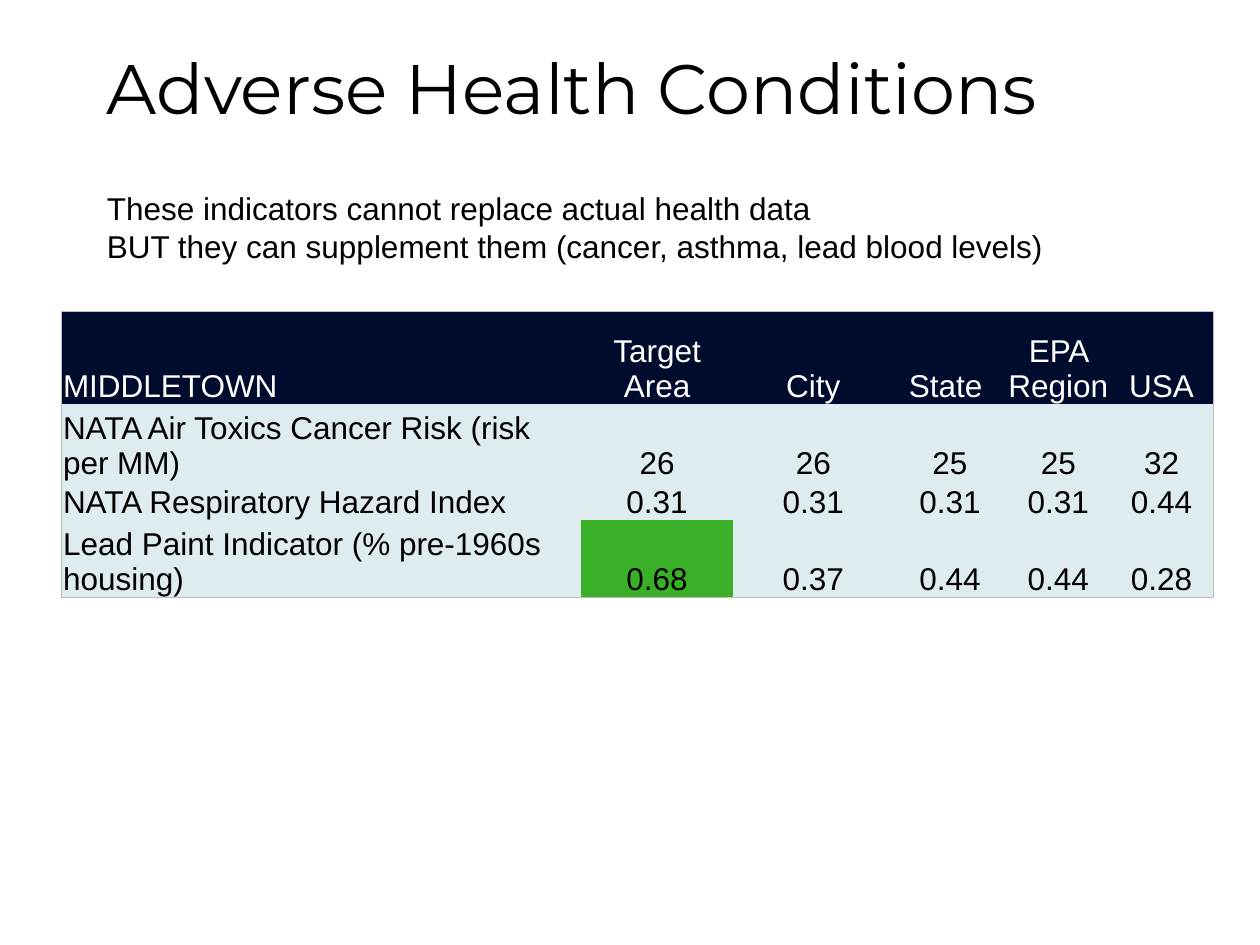
from lxml.etree import SubElement
from pptx import Presentation
from pptx.dml.color import RGBColor
from pptx.enum.text import MSO_ANCHOR as Anchor, PP_ALIGN as Align
from pptx.oxml.ns import qn
from pptx.util import Inches, Pt

PLAIN_TABLE = "{2D5ABB26-0587-4C30-8999-92F81FD0307C}"
BLACK, WHITE = "000000", "FFFFFF"
NAVY, PALE, GREEN, GREY = "000C2D", "DEECEF", "3AB028", "BDBDBE"


def color(value):
    return RGBColor.from_string(value)


class SlideBuilder:
    body_font = "Arial"
    title_font = "Montserrat"
    body_size = 18
    title_size = 40

    def __init__(self, slide):
        self.slide = slide

    def style(self, paragraph, font, size, ink):
        for run in paragraph.runs:
            run.font.name = font
            run.font.size = Pt(size)
            run.font.color.rgb = color(ink)

    def text(self, box, words, font, size, anchor=Anchor.TOP, wrap=True, spacing=None):
        frame = self.slide.shapes.add_textbox(*map(Inches, box)).text_frame
        frame.word_wrap = wrap
        frame.vertical_anchor = anchor
        frame.text = words
        for paragraph in frame.paragraphs:
            paragraph.line_spacing = spacing
            self.style(paragraph, font, size, BLACK)

    def title(self, box, words):
        self.text(box, words, self.title_font, self.title_size, Anchor.MIDDLE, spacing=0.9)

    def note(self, box, words):
        self.text(box, words, self.body_font, self.body_size, wrap=False)

    def border(self, cell, sides):
        properties = cell._tc.get_or_add_tcPr()
        for side in sides:
            line = SubElement(properties, qn(f"a:ln{side}"), w=str(Pt(0.5)))
            fill = SubElement(line, qn("a:solidFill"))
            SubElement(fill, qn("a:srgbClr"), val=GREY)

    def cell(self, cell, words, fill, ink, align, sides):
        self.border(cell, sides)
        cell.fill.solid()
        cell.fill.fore_color.rgb = color(fill)
        cell.margin_left = cell.margin_top = cell.margin_right = Inches(0.01)
        cell.margin_bottom = 0
        cell.vertical_anchor = Anchor.BOTTOM
        cell.text_frame.text = words
        paragraph = cell.text_frame.paragraphs[0]
        paragraph.alignment = align
        self.style(paragraph, self.body_font, self.body_size, ink)

    def table(self, left, top, widths, heights, rows, highlight):
        box = (left, top, sum(widths), sum(heights))
        table = self.slide.shapes.add_table(len(rows), len(widths), *map(Inches, box)).table
        table._tbl.tblPr.find(qn("a:tableStyleId")).text = PLAIN_TABLE
        table.horz_banding = False
        for column, width in zip(table.columns, widths):
            column.width = Inches(width)
        for row, height in zip(table.rows, heights):
            row.height = Inches(height)
        last_row, last_column = len(rows) - 1, len(widths) - 1
        for r, row in enumerate(rows):
            for c, words in enumerate(row):
                edges = {"L": c == 0, "R": c == last_column, "T": r == 0, "B": r == last_row}
                sides = [side for side, outer in edges.items() if outer]
                fill = NAVY if r == 0 else GREEN if (r, c) == highlight else PALE
                ink = WHITE if r == 0 else BLACK
                align = Align.LEFT if c == 0 else Align.CENTER
                self.cell(table.cell(r, c), words, fill, ink, align, sides)


def main():
    deck = Presentation()
    deck.slide_width, deck.slide_height = Inches(10), Inches(7.5)
    builder = SlideBuilder(deck.slides.add_slide(deck.slide_layouts[6]))

    builder.title((0.75, 0, 8.62, 1.45), "Adverse Health Conditions")
    indicators = [
        ("MIDDLETOWN", "Target Area", "City", "State ", "EPA Region", "USA"),
        ("NATA Air Toxics Cancer Risk (risk per MM)", "26", "26", "25", "25", "32"),
        ("NATA Respiratory Hazard Index", "0.31", "0.31", "0.31", "0.31", "0.44"),
        ("Lead Paint Indicator (% pre-1960s housing)", "0.68", "0.37", "0.44", "0.44", "0.28"),
    ]
    builder.table(
        0.49, 2.47,
        widths=[4.12, 1.21, 1.27, 0.9, 0.82, 0.82],
        heights=[0.74, 0.61, 0.31, 0.61],
        rows=indicators,
        highlight=(3, 1),
    )
    builder.note(
        (0.75, 1.45, 7.63, 0.71),
        "These indicators cannot replace actual health data\n"
        "BUT they can supplement them (cancer, asthma, lead blood levels)",
    )
    deck.save("out.pptx")


if __name__ == "__main__":
    main()
